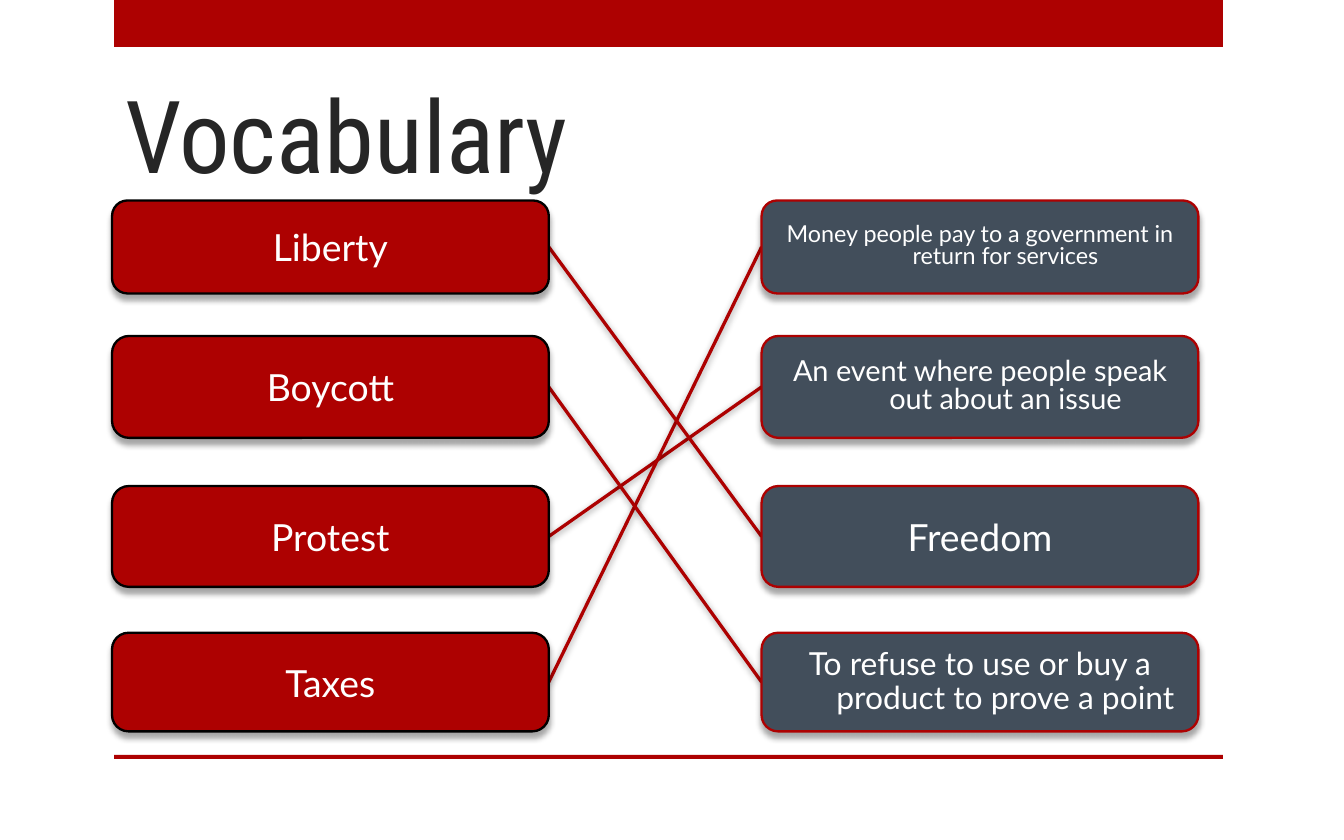
from lxml.etree import SubElement
from pptx import Presentation
from pptx.dml.color import RGBColor
from pptx.enum.shapes import MSO_CONNECTOR, MSO_SHAPE
from pptx.enum.text import MSO_ANCHOR, PP_ALIGN
from pptx.oxml.ns import qn
from pptx.util import Inches, Pt

RED = RGBColor(0xAD, 0x01, 0x01)
SLATE = RGBColor(0x42, 0x4E, 0x5B)
BLACK = RGBColor(0, 0, 0)
INK = RGBColor(0x26, 0x26, 0x26)
WHITE = RGBColor(0xFF, 0xFF, 0xFF)

# The grid has 120 columns and 75 rows, each a twelfth of an inch.
COLUMNS, ROWS = 120, 75
CARD_WIDTH = 39
TERM_LEFT, MEANING_LEFT = 10, 68
CARD_ROWS = [(17.9, 8.3), (30, 9.1), (43.4, 9), (56.5, 8.8)]  # top, height

TERMS = ["Liberty", "Boycott", "Protest", "Taxes"]
MEANINGS = [  # text, size, line spacing
    ("Money people pay to a government in return for services", 12.5, 0.8),
    ("An event where people speak out about an issue", 15.5, 0.8),
    ("Freedom", 20, 1),
    ("To refuse to use or buy a product to prove a point", 17, 0.9),
]
MATCHES = [(2, 1), (3, 0), (1, 3), (0, 2)]  # term row, meaning row


class VocabularyPage:
    heading_font = "Roboto Condensed"
    body_font = "Lato"
    hanging = Inches(0.38)

    def __init__(self, deck):
        self.cell_width = deck.slide_width / COLUMNS
        self.cell_height = deck.slide_height / ROWS
        self.shapes = deck.slides.add_slide(deck.slide_layouts[6]).shapes

    def place(self, left, top, width, height):
        """Turn grid columns and rows into slide lengths."""
        return (round(left * self.cell_width), round(top * self.cell_height),
                round(width * self.cell_width), round(height * self.cell_height))

    def cast_shadow(self, shape, blur, distance, angle, opacity):
        """Blur and distance are in points, angle in degrees, opacity in percent."""
        effects = SubElement(shape._element.spPr, qn("a:effectLst"))
        shadow = SubElement(effects, qn("a:outerShdw"), blurRad=str(Pt(blur)),
                            dist=str(Pt(distance)), dir=str(angle * 60000),
                            rotWithShape="0")
        color = SubElement(shadow, qn("a:srgbClr"), val=str(BLACK))
        SubElement(color, qn("a:alpha"), val=str(opacity * 1000))

    def set_text(self, shape, text, font, size, color):
        frame = shape.text_frame
        frame.word_wrap = True
        frame.text = text
        paragraph = frame.paragraphs[0]
        span = paragraph.runs[0]
        span.font.name = font
        span.font.size = Pt(size)
        span.font.color.rgb = color
        return paragraph

    def bar(self, top, height):
        bar = self.shapes.add_shape(MSO_SHAPE.RECTANGLE,
                                    *self.place(10.2, top, 99, height))
        bar.shadow.inherit = False
        bar.fill.solid()
        bar.fill.fore_color.rgb = RED
        bar.line.fill.background()

    def title(self, text):
        box = self.shapes.add_textbox(*self.place(TERM_LEFT, 4.5, 89, 13.4))
        box.text_frame.vertical_anchor = MSO_ANCHOR.BOTTOM
        self.set_text(box, text, self.heading_font, 54, INK)

    def match(self, term_row, meaning_row):
        start, end = (top + height / 2 for top, height in
                      (CARD_ROWS[term_row], CARD_ROWS[meaning_row]))
        line = self.shapes.add_connector(
            MSO_CONNECTOR.STRAIGHT,
            *self.place(TERM_LEFT + CARD_WIDTH, start, MEANING_LEFT, end))
        line.line.color.rgb = RED
        line.line.width = Pt(1.75)
        self.cast_shadow(line, 4, 1, 88, 40)

    def card(self, left, row, text, fill, outline, size=20, spacing=1):
        top, height = CARD_ROWS[row]
        card = self.shapes.add_shape(MSO_SHAPE.ROUNDED_RECTANGLE,
                                     *self.place(left, top, CARD_WIDTH, height))
        card.fill.solid()
        card.fill.fore_color.rgb = fill
        card.line.color.rgb = outline
        card.line.width = Pt(1.25)
        self.cast_shadow(card, 3, 3, 90, 35)
        card.text_frame.vertical_anchor = MSO_ANCHOR.MIDDLE
        paragraph = self.set_text(card, text, self.body_font, size, WHITE)
        paragraph.alignment = PP_ALIGN.CENTER
        paragraph.line_spacing = float(spacing)
        paragraph.space_before = Pt(0.2 * size)
        properties = paragraph._p.get_or_add_pPr()
        properties.set("marL", str(self.hanging))
        properties.set("indent", str(-self.hanging))


def main():
    deck = Presentation()
    deck.slide_width, deck.slide_height = Inches(10), Inches(6.25)
    page = VocabularyPage(deck)
    page.bar(0, 4.2)
    page.bar(67.4, 0.36)
    for term_row, meaning_row in MATCHES:
        page.match(term_row, meaning_row)
    page.title("Vocabulary")
    for row, term in enumerate(TERMS):
        page.card(TERM_LEFT, row, term, RED, BLACK)
    for row, (meaning, size, spacing) in enumerate(MEANINGS):
        page.card(MEANING_LEFT, row, meaning, SLATE, RED, size, spacing)
    deck.save("out.pptx")


if __name__ == "__main__":
    main()
